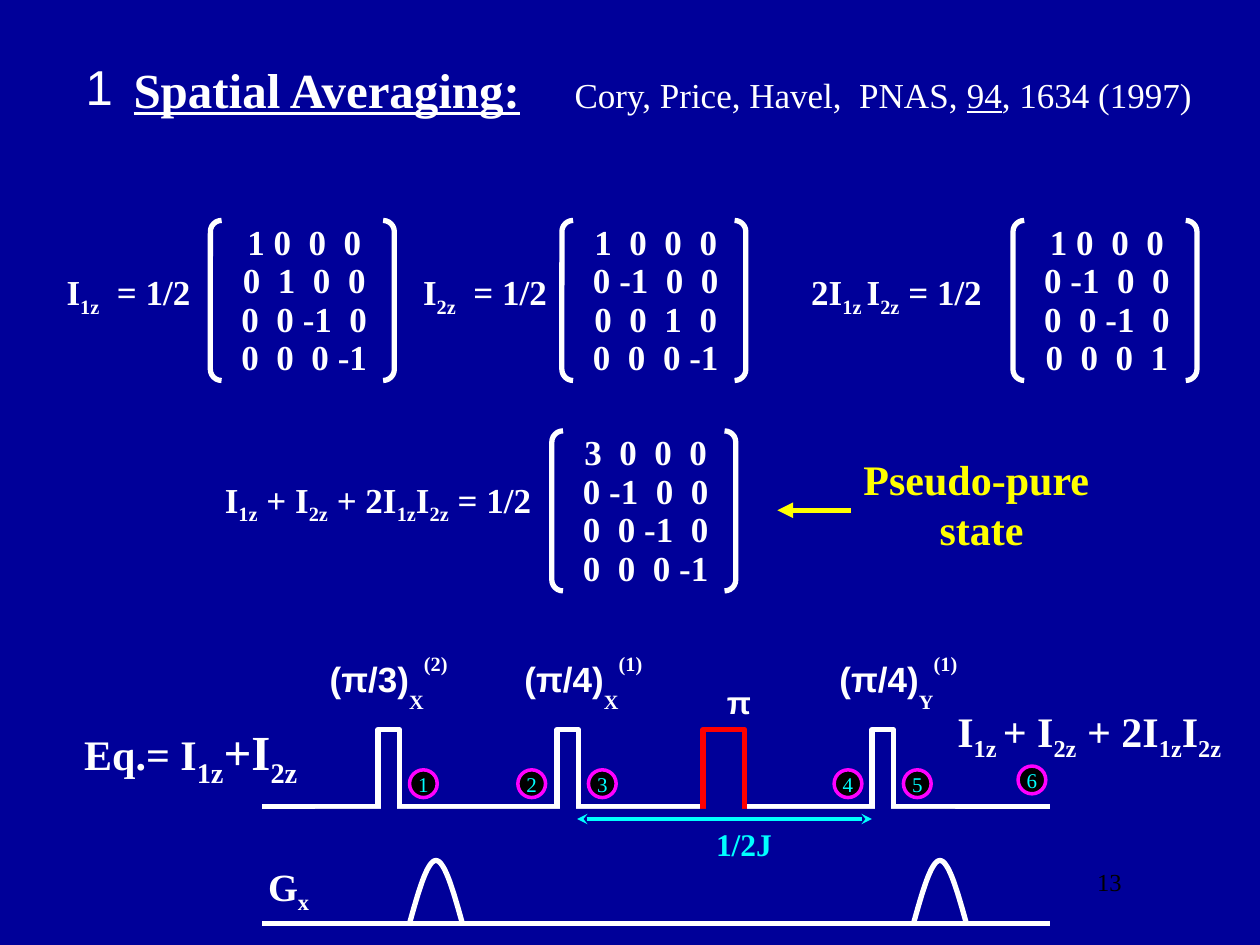
from dataclasses import dataclass
from typing import NamedTuple

from lxml import etree
from pptx import Presentation
from pptx import util as u
from pptx.dml.color import RGBColor
from pptx.enum import shapes, text
from pptx.oxml.ns import qn

PX = 9144  # one px is a hundredth of an inch
NAVY = RGBColor(0x00, 0x00, 0x99)
WHITE = RGBColor(0xFF, 0xFF, 0xFF)
BLACK = RGBColor(0x00, 0x00, 0x00)
RED = RGBColor(0xFF, 0x00, 0x00)
CYAN = RGBColor(0x00, 0xFF, 0xFF)
PINK = RGBColor(0xFF, 0x00, 0xFF)
YELLOW = RGBColor(0xFF, 0xFF, 0x00)
SERIF, SANS = "Times New Roman", "Arial"
LEFT, MID, RIGHT = text.PP_ALIGN.LEFT, text.PP_ALIGN.CENTER, text.PP_ALIGN.RIGHT


class Run(NamedTuple):
    text: str
    base: int = 0
    size: int = 20
    font: str = SERIF
    bold: bool = True
    line: bool = False
    color: RGBColor = WHITE


class Box(NamedTuple):
    x: int
    y: int
    w: int
    h: int


@dataclass
class Matrix:
    x: int
    y: int
    rows: list[str]


@dataclass
class Label:
    box: Box
    runs: list[Run]
    wrap: bool = False
    align: text.PP_ALIGN = MID
    anchor: text.MSO_ANCHOR = text.MSO_ANCHOR.MIDDLE


@dataclass
class Pulse:
    x: int
    w: int
    color: RGBColor = WHITE


def emu(*vals: int) -> list[int]:
    return [v * PX for v in vals]


def put(obj, vals: dict) -> None:
    for key, val in vals.items():
        setattr(obj, key, val)


def sub(mark: str, size: int = 20, small: int = 0) -> list[Run]:
    """Every second part between bars is a subscript."""
    return [Run(part, -25 if i % 2 else 0, small if small and i else size)
            for i, part in enumerate(mark.split("|")) if part]


def write(para, runs: list[Run]) -> None:
    for item in runs:
        run = para.add_run()
        run.text = item.text
        put(run.font, {"size": u.Pt(item.size), "name": item.font,
                       "bold": item.bold, "underline": item.line})
        run.font.color.rgb = item.color
        if item.base:
            run._r.get_or_add_rPr().set("baseline", str(item.base * 1000))


def label(tree, lab: Label):
    frame = tree.add_textbox(*emu(*lab.box)).text_frame
    put(frame, {"word_wrap": lab.wrap, "vertical_anchor": lab.anchor,
                "auto_size": text.MSO_AUTO_SIZE.SHAPE_TO_FIT_TEXT})
    para = frame.paragraphs[0]
    para.alignment = lab.align
    write(para, lab.runs)
    return frame


def shape(tree, kind, box: Box, fill=None, line=None, width: float = 3):
    item = tree.add_shape(kind, *emu(*box))
    paint(item, fill, line, width)
    return item


def paint(item, fill, line, width: float) -> None:
    item.shadow.inherit = False
    if fill is None:
        item.fill.background()
    else:
        item.fill.solid()
        item.fill.fore_color.rgb = fill
    if line is None:
        item.line.fill.background()
    else:
        item.line.color.rgb = line
        item.line.width = u.Pt(width)


def rule(tree, x1: int, y1: int, x2: int, y2: int, color, width: float, **ends) -> None:
    item = tree.add_connector(shapes.MSO_CONNECTOR.STRAIGHT, *emu(x1, y1, x2, y2))
    item.line.color.rgb = color
    item.line.width = u.Pt(width)
    for tag, kind in ends.items():
        etree.SubElement(item.line._get_or_add_ln(), qn(f"a:{tag}")).set("type", kind)
    etree.SubElement(item._element.spPr, qn("a:effectLst"))


def matrix(tree, mat: Matrix) -> None:
    box = Box(mat.x + 10, mat.y + 5, 129, 127)
    frame = label(tree, Label(box, [Run(mat.rows[0])], wrap=True))
    for row in mat.rows[1:]:
        write(frame.add_paragraph(), [Run(row)])
    for para in frame.paragraphs:
        put(para, {"alignment": MID, "line_spacing": 0.5, "space_before": u.Pt(0)})
        gap = para._p.pPr.find(qn("a:spcBef"))
        gap.remove(gap[0])
        etree.SubElement(gap, qn("a:spcPct")).set("val", "50000")
    pair = shape(tree, shapes.MSO_SHAPE.DOUBLE_BRACKET, Box(mat.x, mat.y, 146, 127), line=WHITE)
    pair.adjustments[0] = 0.07


def bell(tree, x: int, y: int, steps: int = 24) -> None:
    """Gradient pulse: two mirrored cubic curves, 42 wide and 50 high."""
    pts = []
    for i in range(steps + 1):
        t = i / steps
        across = 21 * t
        rise = 50 * (3 * (1 - t) * t * t + t ** 3) + 25 * 3 * (1 - t) ** 2 * t
        pts.append((across, rise))
    pts += [(42 - a, r) for a, r in reversed(pts[:-1])]
    pts = [(round((x + a) * PX), round((y - r) * PX)) for a, r in pts]
    build = tree.build_freeform(*pts[0])
    build.add_line_segments(pts[1:], close=False)
    paint(build.convert_to_shape(), None, WHITE, 3)


def title(slide) -> None:
    slide.shapes.title._element.getparent().remove(slide.shapes.title._element)
    body = slide.placeholders[1]
    put(body, dict(zip(("left", "top", "width", "height"), emu(58, 42, 942, 92))))
    body.text_frame.auto_size = text.MSO_AUTO_SIZE.NONE
    para = body.text_frame.paragraphs[0]
    write(para, [Run("Spatial Averaging:", size=28, line=True), Run("\t", size=24),
                 Run("Cory, Price, Havel,  PNAS, ", bold=False),
                 Run("94", bold=False, line=True), Run(", 1634 (1997)", bold=False)])
    props = para._p.get_or_add_pPr()
    props.set("marL", str(38 * PX))
    props.set("indent", str(-38 * PX))
    etree.SubElement(props, qn("a:buFont")).set("typeface", SANS)
    etree.SubElement(props, qn("a:buChar")).set("char", "1")
    tab = etree.SubElement(etree.SubElement(props, qn("a:tabLst")), qn("a:tab"))
    tab.set("pos", str(388 * PX))
    tab.set("algn", "l")


def angle(x: int, w: int, part: str, axis: str, spin: str) -> Label:
    return Label(Box(x, 520, w, 43), [Run(part, font=SANS), Run(axis, -50), Run(spin, 60)], True)


def main() -> None:
    deck = Presentation()
    deck.slide_width, deck.slide_height = emu(1000, 750)
    slide = deck.slides.add_slide(deck.slide_layouts[1])
    slide.background.fill.solid()
    slide.background.fill.fore_color.rgb = NAVY
    title(slide)
    tree = slide.shapes
    rect, oval = shapes.MSO_SHAPE.RECTANGLE, shapes.MSO_SHAPE.OVAL

    # Pulse row: baseline, pulses, then a cover for their feet
    rule(tree, 208, 640, 833, 640, WHITE, 2.5)
    for pulse in (Pulse(692, 17), Pulse(558, 33, RED), Pulse(300, 17), Pulse(442, 17)):
        shape(tree, rect, Box(pulse.x, 579, pulse.w, 100), NAVY, pulse.color)
    shape(tree, rect, Box(250, 642, 508, 58), NAVY)
    rule(tree, 458, 650, 692, 650, CYAN, 2, headEnd="stealth", tailEnd="stealth")

    # Numbered time points
    for num, (x, y) in enumerate([(325, 611), (411, 611), (467, 611),
                                  (662, 611), (717, 611), (808, 608)], 1):
        dot = shape(tree, oval, Box(x, y, 22, 22), BLACK, PINK, 2)
        put(dot.text_frame, {"word_wrap": False, "vertical_anchor": text.MSO_ANCHOR.MIDDLE})
        dot.text_frame.paragraphs[0].alignment = MID
        write(dot.text_frame.paragraphs[0], [Run(str(num), size=12, bold=False, color=CYAN)])

    # Gradient row
    rule(tree, 208, 733, 833, 733, WHITE, 2.5)
    for x in (325, 725):
        bell(tree, x, 733)

    # Matrices and the arrow to the result
    for mat in (Matrix(167, 175, ["1 0  0  0", "0  1  0  0", "0  0 -1  0", "0  0  0 -1"]),
                Matrix(446, 175, ["1  0  0  0", "0 -1  0  0", "0  0  1  0", "0  0  0 -1"]),
                Matrix(804, 175, ["1 0  0  0", "0 -1  0  0", "0  0 -1  0", "0  0  0  1"]),
                Matrix(438, 342, ["3  0  0  0", "0 -1  0  0", "0  0 -1  0", "0  0  0 -1"])):
        matrix(tree, mat)
    rule(tree, 675, 405, 617, 405, YELLOW, 3, tailEnd="triangle")

    # Formulas and captions
    top = text.MSO_ANCHOR.TOP
    for lab in (
        angle(225, 167, "(π/3)", "X", "(2)"),
        angle(392, 142, "(π/4)", "X", "(1)"),
        angle(642, 142, "(π/4)", "Y", "(1)"),
        Label(Box(567, 537, 32, 40), [Run("π", size=18, font=SANS)], True),
        Label(Box(558, 650, 65, 40), [Run("1/2J", size=18, color=CYAN)]),
        Label(Box(200, 682, 58, 47), sub("G|x", 22), True),
        Label(Box(165, 377, 277, 43), sub("I|1z| + I|2z| + 2I|1z|I|2z| = 1/2 ")),
        Label(Box(42, 212, 120, 43), sub("I|1z|  = 1/2")),
        Label(Box(325, 212, 120, 43), sub("I|2z|  = 1/2")),
        Label(Box(632, 212, 159, 43), sub("2I|1z |I|2z| = 1/2")),
        Label(Box(57, 568, 203, 57), sub("Eq.= I|1z|+I|2z", 24, 28), False, LEFT, top),
        Label(Box(750, 555, 241, 50), sub("I|1z |+ I|2z| + 2I|1z|I|2z", 24), False, LEFT, top),
        Label(Box(692, 683, 208, 50), [Run("13", size=14, bold=False, color=BLACK)],
              True, RIGHT, top),
    ):
        label(tree, lab)
    state = label(tree, Label(Box(675, 355, 208, 90), [Run("Pseudo-pure ", size=24, color=YELLOW)]))
    para = state.add_paragraph()
    para.alignment = MID
    write(para, [Run("state", size=24, color=YELLOW)])

    deck.save("out.pptx")


if __name__ == "__main__":
    main()
